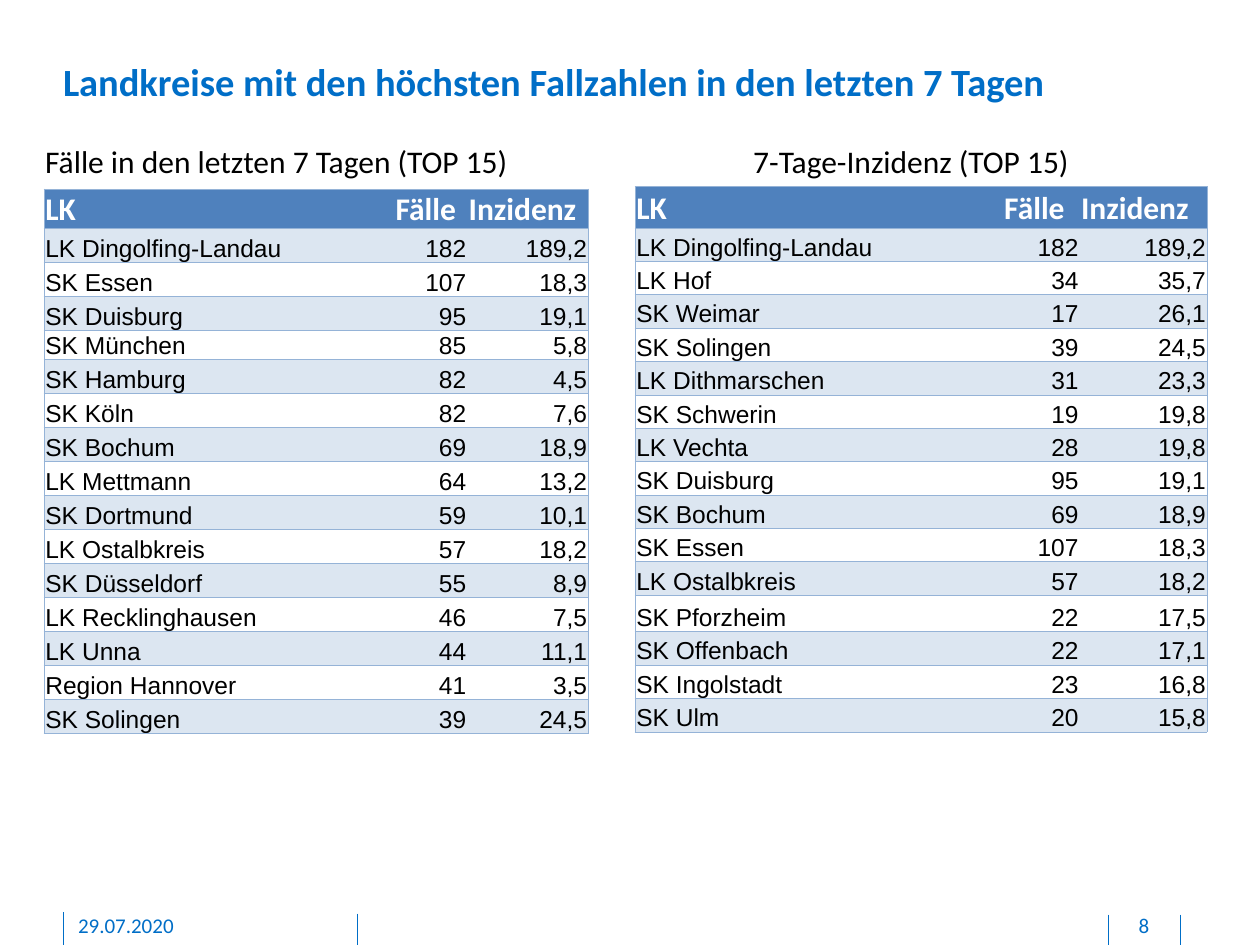
from lxml.etree import SubElement
from pptx import Presentation
from pptx.dml.color import RGBColor
from pptx.enum.shapes import MSO_CONNECTOR as CONN
from pptx.enum.text import MSO_ANCHOR as ANCHOR, PP_ALIGN as ALIGN
from pptx.oxml.ns import qn
from pptx.util import Inches, Pt

# Content
TITLE = "Landkreise mit den höchsten Fallzahlen in den letzten 7 Tagen"
HEADER = ("LK", "Fälle", "Inzidenz")
BY_CASES = [
    ("LK Dingolfing-Landau", "182", "189,2"),
    ("SK Essen", "107", "18,3"),
    ("SK Duisburg", "95", "19,1"),
    ("SK München", "85", "5,8"),
    ("SK Hamburg", "82", "4,5"),
    ("SK Köln", "82", "7,6"),
    ("SK Bochum", "69", "18,9"),
    ("LK Mettmann", "64", "13,2"),
    ("SK Dortmund", "59", "10,1"),
    ("LK Ostalbkreis", "57", "18,2"),
    ("SK Düsseldorf", "55", "8,9"),
    ("LK Recklinghausen", "46", "7,5"),
    ("LK Unna", "44", "11,1"),
    ("Region Hannover", "41", "3,5"),
    ("SK Solingen", "39", "24,5"),
]
BY_INCIDENCE = [
    ("LK Dingolfing-Landau", "182", "189,2"),
    ("LK Hof", "34", "35,7"),
    ("SK Weimar", "17", "26,1"),
    ("SK Solingen", "39", "24,5"),
    ("LK Dithmarschen", "31", "23,3"),
    ("SK Schwerin", "19", "19,8"),
    ("LK Vechta", "28", "19,8"),
    ("SK Duisburg", "95", "19,1"),
    ("SK Bochum", "69", "18,9"),
    ("SK Essen", "107", "18,3"),
    ("LK Ostalbkreis", "57", "18,2"),
    ("SK Pforzheim", "22", "17,5"),
    ("SK Offenbach", "22", "17,1"),
    ("SK Ingolstadt", "23", "16,8"),
    ("SK Ulm", "20", "15,8"),
]
# Row heights: header, usual row, exceptions by row number
TABLES = [
    dict(rows=BY_CASES, at=(0.35, 1.5, 4.32, 4.29), cols=(2.78, 0.58, 0.96),
         heights=(0.29, 0.27, {4: 0.14})),
    dict(rows=BY_INCIDENCE, at=(5.04, 1.48, 4.53, 4.32), cols=(2.92, 0.61, 1.01),
         heights=(0.33, 0.265, {12: 0.29})),
]
BLUE, HEAD, BAND, RULE = "006EC7", "4F81BD", "DCE6F1", "95B3D7"
HEAD_FONT = dict(name="Calibri", size=Pt(18), bold=True)
BODY_FONT = dict(name="Arial", size=Pt(14), bold=False)
CAPTION_FONT = dict(name="Calibri", size=Pt(18))
FOOT_FONT = dict(name="Calibri", size=Pt(12))
CAPTION_BOX = dict(word_wrap=False)
FOOT_BOX = dict(word_wrap=True, margin_left=0, margin_top=0, margin_right=0,
                margin_bottom=Inches(0.05))
TEXTS = [
    ("7-Tage-Inzidenz (TOP 15)", (5.88, 1.08, 2.74, 0.4), CAPTION_BOX, CAPTION_FONT, "000000", ALIGN.LEFT),
    ("Fälle in den letzten 7 Tagen (TOP 15)", (0.26, 1.08, 3.92, 0.4), CAPTION_BOX, CAPTION_FONT, "000000", ALIGN.LEFT),
    ("29.07.2020", (0.62, 7.24, 2.03, 0.21), FOOT_BOX, FOOT_FONT, BLUE, ALIGN.LEFT),
    ("8", (8.81, 7.24, 0.54, 0.21), FOOT_BOX, FOOT_FONT, BLUE, ALIGN.CENTER),
]
FOOT_RULES = [(0.5, 7.24), (2.84, 7.25), (8.8, 7.26), (9.37, 7.26)]


def rgb(value):
    return RGBColor.from_string(value)


def assign(obj, values):
    for name, value in values.items():
        setattr(obj, name, value)


def write(tf, text, font, color, align=ALIGN.LEFT):
    p = tf.paragraphs[0]
    p.alignment = align
    r = p.add_run()
    r.text = text
    assign(r.font, font)
    r.font.color.rgb = rgb(color)


def set_borders(cell, sides):
    tc_pr = cell._tc.get_or_add_tcPr()
    for side in "LRTB":
        ln = SubElement(tc_pr, qn(f"a:ln{side}"), w=str(Pt(0.5)))
        if side in sides:
            fill = SubElement(ln, qn("a:solidFill"))
            SubElement(fill, qn("a:srgbClr"), val=RULE)
        else:
            SubElement(ln, qn("a:noFill"))


def add_ranking(s, rows, at, cols, heights):
    rows = [HEADER] + rows
    table = s.shapes.add_table(len(rows), len(cols), *map(Inches, at)).table
    table.first_row = table.horz_banding = False
    for column, width in zip(table.columns, cols):
        column.width = Inches(width)
    head_h, row_h, special = heights
    for i, row in enumerate(rows):
        table.rows[i].height = Inches(special.get(i, row_h if i else head_h))
        for j, text in enumerate(row):
            cell = table.cell(i, j)
            edge = Inches(0.01)
            assign(cell, dict(vertical_anchor=ANCHOR.BOTTOM, margin_left=edge,
                              margin_right=edge, margin_top=edge, margin_bottom=0))
            set_borders(cell, "TB" + ("L", "", "R")[j])
            if i % 2 or i == 0:
                cell.fill.solid()
                cell.fill.fore_color.rgb = rgb(BAND if i else HEAD)
            else:
                cell.fill.background()
            if i == 0:
                write(cell.text_frame, text, HEAD_FONT, "FFFFFF")
            else:
                write(cell.text_frame, text, BODY_FONT, "000000",
                      ALIGN.RIGHT if j else ALIGN.LEFT)


prs = Presentation()
prs.slide_width, prs.slide_height = Inches(10), Inches(7.5)
s = prs.slides.add_slide(prs.slide_layouts[5])

# Footer rules
for x, top in FOOT_RULES:
    line = s.shapes.add_connector(CONN.STRAIGHT, Inches(x), Inches(top), Inches(x), Inches(7.5))
    line.line.color.rgb = rgb(BLUE)
    line.line.width = Pt(0.5)
    SubElement(line._element.spPr, qn("a:effectLst"))

# Title
title = s.shapes.title
assign(title, dict(left=Inches(0.5), top=Inches(0.46), width=Inches(8.85), height=Inches(0.37)))
assign(title.text_frame, dict(margin_left=0, margin_top=0, margin_right=0, margin_bottom=0,
                              word_wrap=True, vertical_anchor=ANCHOR.MIDDLE))
write(title.text_frame, TITLE, dict(name="Calibri", size=Pt(22), bold=True), BLUE)

# Tables
for ranking in TABLES:
    add_ranking(s, **ranking)

# Captions, date and page number
for text, at, box, font, color, align in TEXTS:
    tf = s.shapes.add_textbox(*map(Inches, at)).text_frame
    assign(tf, box)
    write(tf, text, font, color, align)

prs.save("out.pptx")
